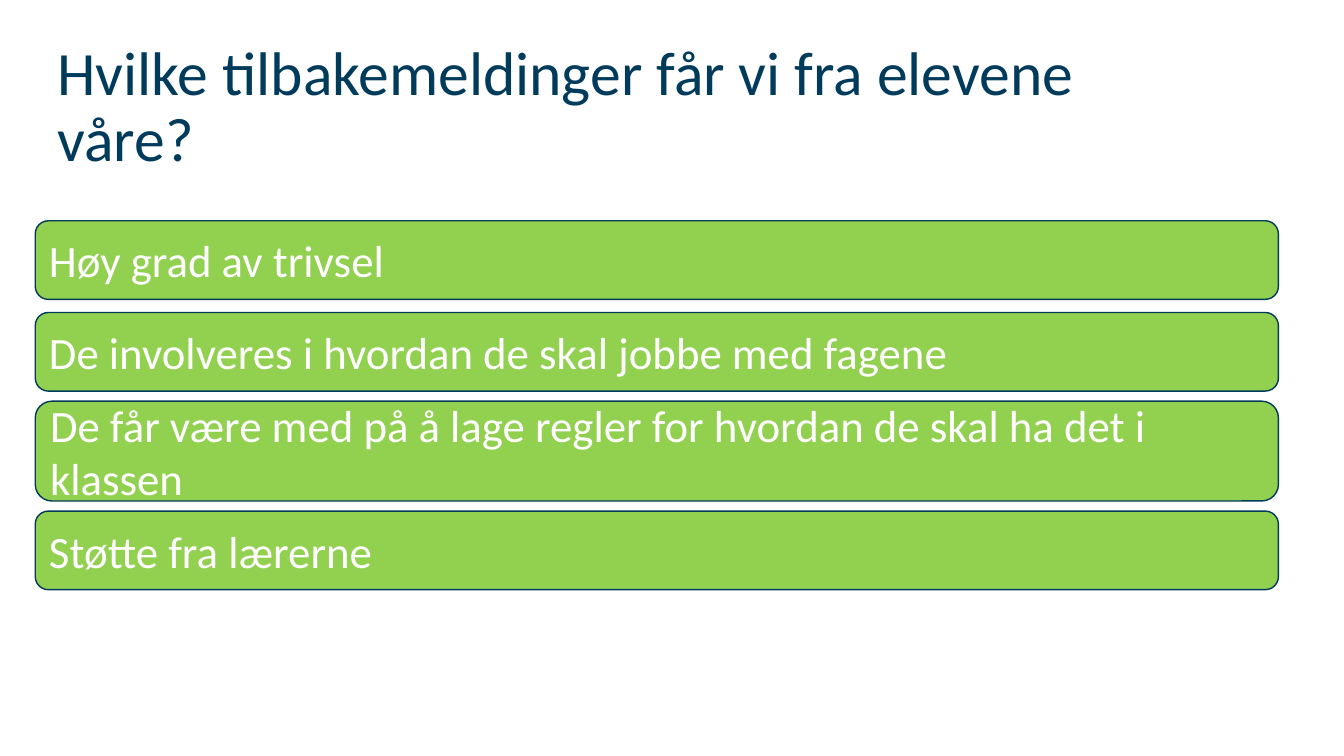
from pptx import Presentation, util as u
from pptx.dml.color import RGBColor
from pptx.enum import shapes, text

FONT = "Calibri"
NAVY, EDGE, GREEN, WHITE = "003B5C", "003A59", "92D050", "FFFFFF"
POINTS = [
    (2.19, 0.78, "Høy grad av trivsel"),
    (3.1, 0.78, "De involveres i hvordan de skal jobbe med fagene"),
    (3.98, 0.99, "De får være med på å lage regler for hvordan de skal ha det i klassen"),
    (5.07, 0.78, "Støtte fra lærerne"),
]


def paint(target, color):
    """Set a colour format from a hex string."""
    target.rgb = RGBColor.from_string(color)


def write(shape, words, size, color, space=None):
    """Write one left-aligned, vertically centred paragraph."""
    frame = shape.text_frame
    frame.word_wrap = True
    frame.vertical_anchor = text.MSO_ANCHOR.MIDDLE
    para = frame.paragraphs[0]
    para.alignment = text.PP_ALIGN.LEFT
    if space:
        para.line_spacing = space
    run = para.add_run()
    run.text = words
    run.font.name = FONT
    run.font.size = u.Pt(size)
    paint(run.font.color, color)


def add_title(slide, words):
    """Add the slide heading."""
    box = slide.shapes.add_textbox(
        u.Inches(0.47), u.Inches(0.35), u.Inches(11.5), u.Inches(1.45))
    write(box, words, 44, NAVY, 0.9)


def add_bar(slide, top, height, words):
    """Add one green bar with its feedback point."""
    bar = slide.shapes.add_shape(
        shapes.MSO_SHAPE.FLOWCHART_ALTERNATE_PROCESS,
        u.Inches(0.35), u.Inches(top), u.Inches(12.33), u.Inches(height))
    bar.shadow.inherit = False
    bar.fill.solid()
    paint(bar.fill.fore_color, GREEN)
    paint(bar.line.color, EDGE)
    bar.line.width = u.Pt(1)
    write(bar, words, 32, WHITE)


def main():
    """Build and save the slide."""
    deck = Presentation()
    deck.slide_width, deck.slide_height = u.Inches(13.33), u.Inches(7.5)
    slide = deck.slides.add_slide(deck.slide_layouts[6])
    add_title(slide, "Hvilke tilbakemeldinger får vi fra elevene våre?")
    for top, height, words in POINTS:
        add_bar(slide, top, height, words)
    deck.save("out.pptx")


if __name__ == "__main__":
    main()
